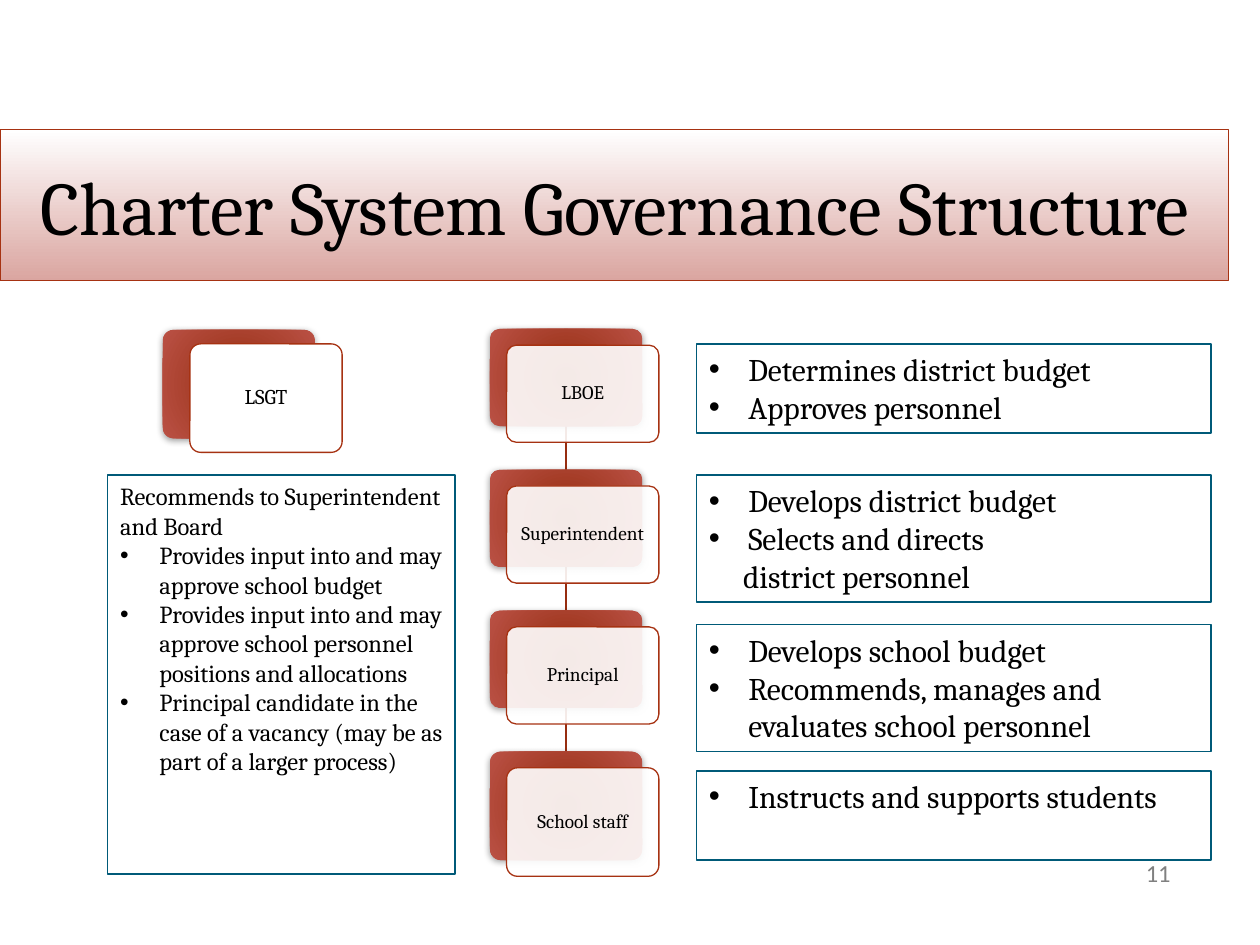
from lxml import etree
from pptx import Presentation
from pptx import util as u
from pptx.dml.color import RGBColor
from pptx.enum import shapes, text
from pptx.oxml import parse_xml
from pptx.oxml.ns import nsdecls, qn

Pt = u.Pt
ALIGN = text.PP_ALIGN
ANCHOR = text.MSO_ANCHOR


def color(value):
    return RGBColor.from_string(value)


def write(frame, paragraphs, size=18, font="Cambria", fill="000000",
          align=ALIGN.LEFT, anchor=ANCHOR.TOP, spacing=None, margin=None):
    """Fill a frame with (text, bulleted, left indent) paragraphs."""
    frame.word_wrap = True
    frame.vertical_anchor = anchor
    if margin is not None:
        frame.margin_left = frame.margin_right = Pt(margin)
        frame.margin_top = frame.margin_bottom = Pt(margin)
    for index, (words, bulleted, indent) in enumerate(paragraphs):
        paragraph = frame.add_paragraph() if index else frame.paragraphs[0]
        paragraph.text = words
        paragraph.alignment = align
        paragraph.line_spacing = spacing
        properties = paragraph._p.get_or_add_pPr()
        if indent:
            properties.set("marL", str(Pt(indent)))
        if bulleted:
            properties.set("indent", str(-Pt(indent)))
            etree.SubElement(properties, qn("a:buFont"), typeface="Arial")
            etree.SubElement(properties, qn("a:buChar"), char="•")
        paragraph.font.size = Pt(size)
        paragraph.font.name = font
        paragraph.font.color.rgb = color(fill)


def plain(words):
    return words, False, 0


def bullet(words):
    return words, True, 22.5


class SlideBuilder:
    accent = "A63212"
    panel_line = "005A78"
    connector_line = "972D10"
    card_gradient = ("952D10", "BA5145")
    title_gradient = ("FFFFFF", "DAA5A0")
    line_width = 0.75

    def __init__(self, slide):
        self.slide = slide

    def box(self, left, top, width, height, line=None, rounded=False):
        kind = shapes.MSO_SHAPE.ROUNDED_RECTANGLE if rounded else shapes.MSO_SHAPE.RECTANGLE
        shape = self.slide.shapes.add_shape(kind, Pt(left), Pt(top), Pt(width), Pt(height))
        shape.shadow.inherit = False
        shape.fill.background()
        if rounded:
            shape.adjustments[0] = 0.1
        if line:
            shape.line.color.rgb = color(line)
            shape.line.width = Pt(self.line_width)
        else:
            shape.line.fill.background()
        return shape

    def gradient(self, shape, colors, direction):
        """Replace the empty fill; direction is the XML of the gradient's course."""
        first, last = colors
        fill = parse_xml(
            f'<a:gradFill {nsdecls("a")} rotWithShape="1"><a:gsLst>'
            f'<a:gs pos="0"><a:srgbClr val="{first}"/></a:gs>'
            f'<a:gs pos="100000"><a:srgbClr val="{last}"/></a:gs>'
            f'</a:gsLst>{direction}</a:gradFill>')
        properties = shape._element.spPr
        properties.replace(properties.find(qn("a:noFill")), fill)

    def title(self, words, left, top, width, height):
        shape = self.box(left, top, width, height, self.accent)
        self.gradient(shape, self.title_gradient, '<a:lin ang="5400000" scaled="0"/>')
        write(shape.text_frame, [plain(words)], size=43.2, align=ALIGN.CENTER,
              anchor=ANCHOR.MIDDLE)

    def card(self, words, left, top, width, height, offset, size=11, opacity=90):
        """Draw a shaded card with a labelled white card shifted over it."""
        back = self.box(left, top, width, height, rounded=True)
        self.gradient(back, self.card_gradient,
                      '<a:path path="circle"><a:fillToRect l="40000" t="100000" '
                      'r="40000" b="100000"/></a:path>')
        effects = back._element.spPr.find(qn("a:effectLst"))
        effects.append(parse_xml(
            f'<a:outerShdw {nsdecls("a")} blurRad="{Pt(4)}" dist="{Pt(1)}" dir="5400000" '
            'rotWithShape="0"><a:srgbClr val="000000"><a:alpha val="37000"/>'
            '</a:srgbClr></a:outerShdw>'))
        front = self.box(left + offset[0], top + offset[1], width, height,
                         self.accent, rounded=True)
        front.fill.solid()
        front.fill.fore_color.rgb = color("FFFFFF")
        if opacity < 100:
            white = front._element.spPr.find(qn("a:solidFill"))[0]
            etree.SubElement(white, qn("a:alpha"), val=str(opacity * 1000))
        write(front.text_frame, [plain(words)], size=size, align=ALIGN.CENTER,
              anchor=ANCHOR.MIDDLE, spacing=0.9, margin=3.3)

    def panel(self, paragraphs, left, top, width, height, size=18):
        shape = self.box(left, top, width, height, self.panel_line)
        write(shape.text_frame, paragraphs, size=size)

    def vertical_line(self, x, top, bottom):
        line = self.slide.shapes.add_connector(
            shapes.MSO_CONNECTOR.STRAIGHT, Pt(x), Pt(top), Pt(x), Pt(bottom))
        line.line.color.rgb = color(self.connector_line)
        line.line.width = Pt(self.line_width)
        etree.SubElement(line._element.spPr, qn("a:effectLst"))

    def page_number(self, number, left, top, width, height):
        shape = self.slide.shapes.add_textbox(Pt(left), Pt(top), Pt(width), Pt(height))
        write(shape.text_frame, [plain(number)], size=14, font="Calibri", fill="808080",
              align=ALIGN.RIGHT, anchor=ANCHOR.MIDDLE)


def main():
    presentation = Presentation()
    presentation.slide_width, presentation.slide_height = Pt(720), Pt(540)
    builder = SlideBuilder(presentation.slides.add_slide(presentation.slide_layouts[6]))

    builder.title("Charter System Governance Structure", 0, 74, 702, 86.5)

    card_width, card_height, tall_card = 87, 55.5, 62
    builder.card("LSGT", 93, 188.5, card_width, tall_card, (15.5, 8), size=12, opacity=100)
    builder.panel([
        plain("Recommends to Superintendent and Board"),
        bullet("Provides input into and may approve school budget"),
        bullet("Provides input into and may approve school personnel positions and allocations"),
        bullet("Principal candidate in the case of a vacancy (may be as part of a larger process)"),
    ], 61.5, 271.5, 198.5, 228, size=14)

    roles = ["LBOE", "Superintendent", "Principal", "School staff"]
    role_left, role_top, role_step = 280, 188, 80.5
    tops = [role_top + index * role_step for index in range(len(roles))]
    for top, next_top in zip(tops, tops[1:]):
        builder.vertical_line(role_left + card_width / 2, top + card_height, next_top)
    for role, top in zip(roles, tops):
        height = tall_card if role == roles[-1] else card_height
        builder.card(role, role_left, top, card_width, height, (9.5, 9.25))

    duties = [
        (196.5, 51, [bullet("Determines district budget"), bullet("Approves personnel")]),
        (271.5, 72.5, [bullet("Develops district budget"), bullet("Selects and directs"),
                       ("district personnel", False, 19.5)]),
        (357, 72.5, [bullet("Develops school budget"),
                     bullet("Recommends, manages and evaluates school personnel")]),
        (440.5, 51, [bullet("Instructs and supports students")]),
    ]
    for top, height, paragraphs in duties:
        builder.panel(paragraphs, 398, top, 294, height)

    builder.page_number("11", 508, 484, 168, 29)
    presentation.save("out.pptx")


if __name__ == "__main__":
    main()
